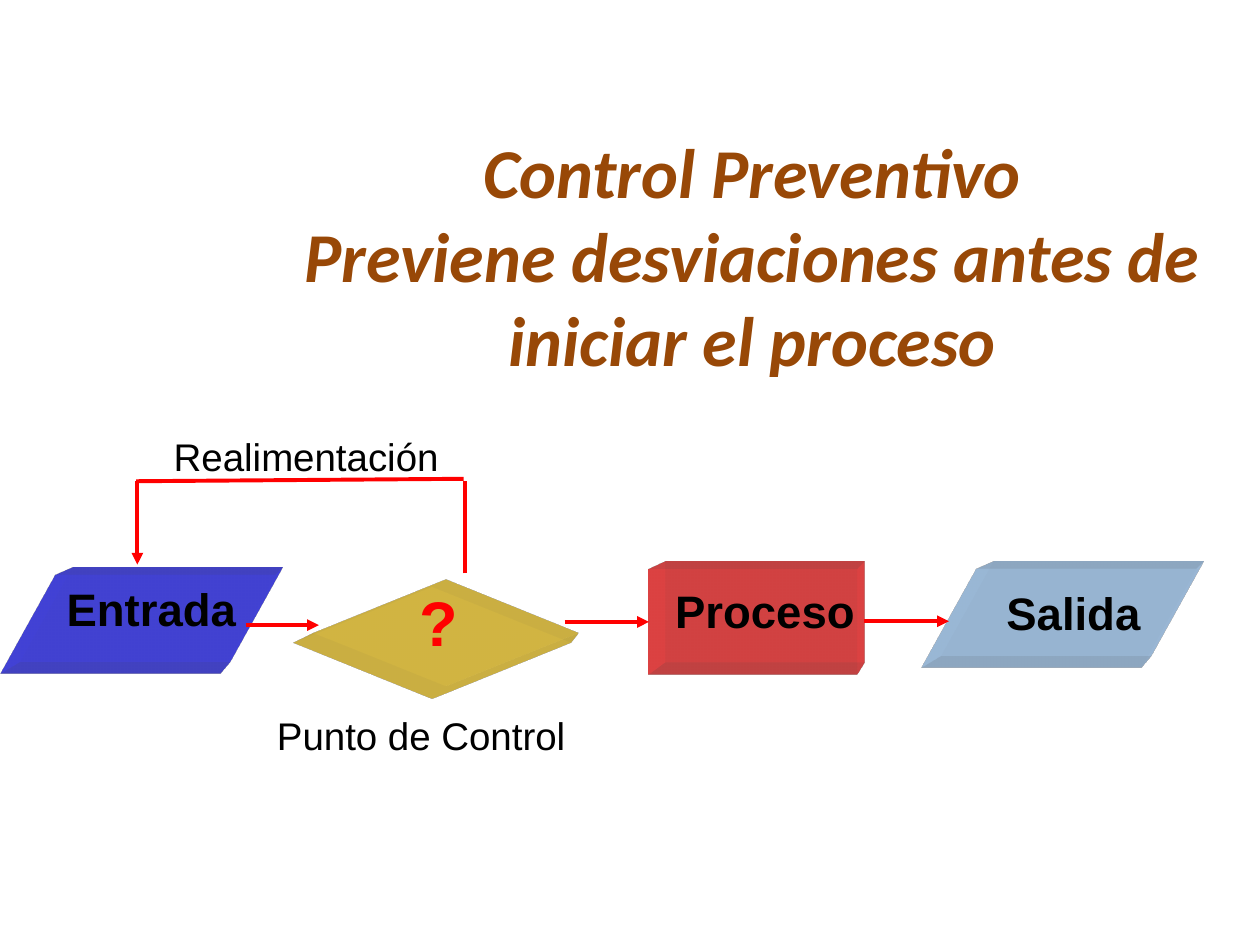
from dataclasses import dataclass
from typing import Optional

from lxml.etree import SubElement
from pptx import Presentation
from pptx.dml.color import RGBColor
from pptx.enum.shapes import MSO_CONNECTOR, MSO_SHAPE
from pptx.enum.text import MSO_ANCHOR, MSO_AUTO_SIZE, PP_ALIGN
from pptx.oxml import parse_xml
from pptx.oxml.ns import nsdecls, qn
from pptx.util import Pt


@dataclass(frozen=True)
class Theme:
    title: str = "984807"
    ink: str = "000000"
    red: str = "FF0000"
    blue: str = "0000FF"
    gold: str = "FFCC00"
    sky: str = "99CCFF"
    head: str = "Calibri"
    body: str = "Arial"
    huge: int = 40
    mark: int = 36
    step: int = 26
    note: int = 22
    line: float = 2.25


@dataclass(frozen=True)
class Block:
    name: str
    kind: MSO_SHAPE
    box: tuple
    color: str


@dataclass(frozen=True)
class Label:
    text: str
    box: tuple
    size: int
    bold: bool = False
    color: str = Theme.ink
    align: PP_ALIGN = PP_ALIGN.JUSTIFY


@dataclass(frozen=True)
class Line:
    start: tuple
    end: tuple
    arrow: bool = False
    target: Optional[str] = None


THEME = Theme()

BLOCKS = [
    Block("input", MSO_SHAPE.FLOWCHART_DATA, (0, 328.5, 157, 56.2), THEME.blue),
    Block("process", MSO_SHAPE.RECTANGLE, (370.8, 325.5, 118.8, 59.8), THEME.red),
    Block("output", MSO_SHAPE.FLOWCHART_DATA, (526.3, 325.5, 157, 56.2), THEME.sky),
    Block("check", MSO_SHAPE.FLOWCHART_DECISION, (167.8, 335.5, 158.4, 63.4), THEME.gold),
]

LABELS = [
    Label("Entrada", (31, 328.5, 120.2, 38.2), THEME.step, True),
    Label("Proceso", (378.7, 329.8, 151.9, 38.2), THEME.step, True),
    Label("Salida", (568, 330.5, 99.4, 38.2), THEME.step, True),
    Label("?", (214.5, 329.8, 72, 50.4), THEME.mark, True, THEME.red, PP_ALIGN.CENTER),
    Label("Punto de Control", (151.2, 403.2, 192.2, 33.8), THEME.note),
    Label("Realimentación", (92.2, 244, 180, 33.8), THEME.note),
]

LINES = [
    Line((140.4, 357.2), (182.2, 357.2), True),
    Line((322.6, 355.4), (370.8, 355.4), True, "process"),
    Line((493.9, 355), (542.2, 355), True),
    Line((265.7, 327.6), (265.7, 275)),
    Line((265, 273.6), (77.8, 275)),
    Line((78.5, 275), (78.5, 322.6), True),
]


def style(target, values: dict) -> None:
    for name, value in values.items():
        setattr(target, name, value)


def place(shape, box: tuple) -> None:
    style(shape, dict(zip(("left", "top", "width", "height"), map(Pt, box))))


def add_depth(shape, color: str) -> None:
    """Make the fill half transparent and extrude the shape to the top right."""
    props = shape._element.spPr
    tint = props.find(qn("a:solidFill")).find(qn("a:srgbClr"))
    SubElement(tint, qn("a:alpha"), val="50000")
    props.append(parse_xml(
        f'<a:scene3d {nsdecls("a")}><a:camera prst="legacyPerspectiveTopRight"/>'
        '<a:lightRig rig="legacyFlat3" dir="b"/></a:scene3d>'))
    props.append(parse_xml(
        f'<a:sp3d {nsdecls("a")} extrusionH="430200" prstMaterial="legacyMatte">'
        '<a:bevelT w="13500" h="13500" prst="angle"/>'
        '<a:bevelB w="13500" h="13500" prst="angle"/>'
        f'<a:extrusionClr><a:srgbClr val="{color}"/></a:extrusionClr></a:sp3d>'))


def add_block(slide, block: Block):
    shape = slide.shapes.add_shape(block.kind, *map(Pt, block.box))
    shape.shadow.inherit = False
    shape.fill.solid()
    shape.fill.fore_color.rgb = RGBColor.from_string(block.color)
    shape.line.fill.background()
    add_depth(shape, block.color)
    return shape


def add_label(slide, label: Label) -> None:
    frame = slide.shapes.add_textbox(*map(Pt, label.box)).text_frame
    frame.word_wrap = True
    frame.text = label.text
    para = frame.paragraphs[0]
    para.alignment = label.align
    font = para.runs[0].font
    style(font, {"name": THEME.body, "size": Pt(label.size), "bold": label.bold})
    font.color.rgb = RGBColor.from_string(label.color)


def add_line(slide, line: Line, shapes: dict) -> None:
    wire = slide.shapes.add_connector(
        MSO_CONNECTOR.STRAIGHT, *map(Pt, line.start + line.end))
    if line.target:
        wire.end_connect(shapes[line.target], 1)
    wire.line.width = Pt(THEME.line)
    wire.line.color.rgb = RGBColor.from_string(THEME.red)
    if line.arrow:
        SubElement(wire.line._get_or_add_ln(), qn("a:tailEnd"), type="triangle")
    SubElement(wire._element.spPr, qn("a:effectLst"))


def set_title(slide) -> None:
    title = slide.shapes.title
    place(title, (123.8, 65.5, 612, 160))
    frame = title.text_frame
    style(frame, {"word_wrap": True, "auto_size": MSO_AUTO_SIZE.NONE,
                  "vertical_anchor": MSO_ANCHOR.MIDDLE})
    frame.text = "Control Preventivo\vPreviene desviaciones antes de iniciar el proceso"
    para = frame.paragraphs[0]
    para.alignment = PP_ALIGN.CENTER
    for run in para.runs:
        style(run.font, {"name": THEME.head, "size": Pt(THEME.huge),
                         "bold": True, "italic": True})
        run.font.color.rgb = RGBColor.from_string(THEME.title)


def main() -> None:
    deck = Presentation()
    style(deck, {"slide_width": Pt(720), "slide_height": Pt(540)})
    slide = deck.slides.add_slide(deck.slide_layouts[5])
    set_title(slide)
    shapes = {block.name: add_block(slide, block) for block in BLOCKS}
    for label in LABELS:
        add_label(slide, label)
    for line in LINES:
        add_line(slide, line, shapes)
    deck.save("out.pptx")


if __name__ == "__main__":
    main()
